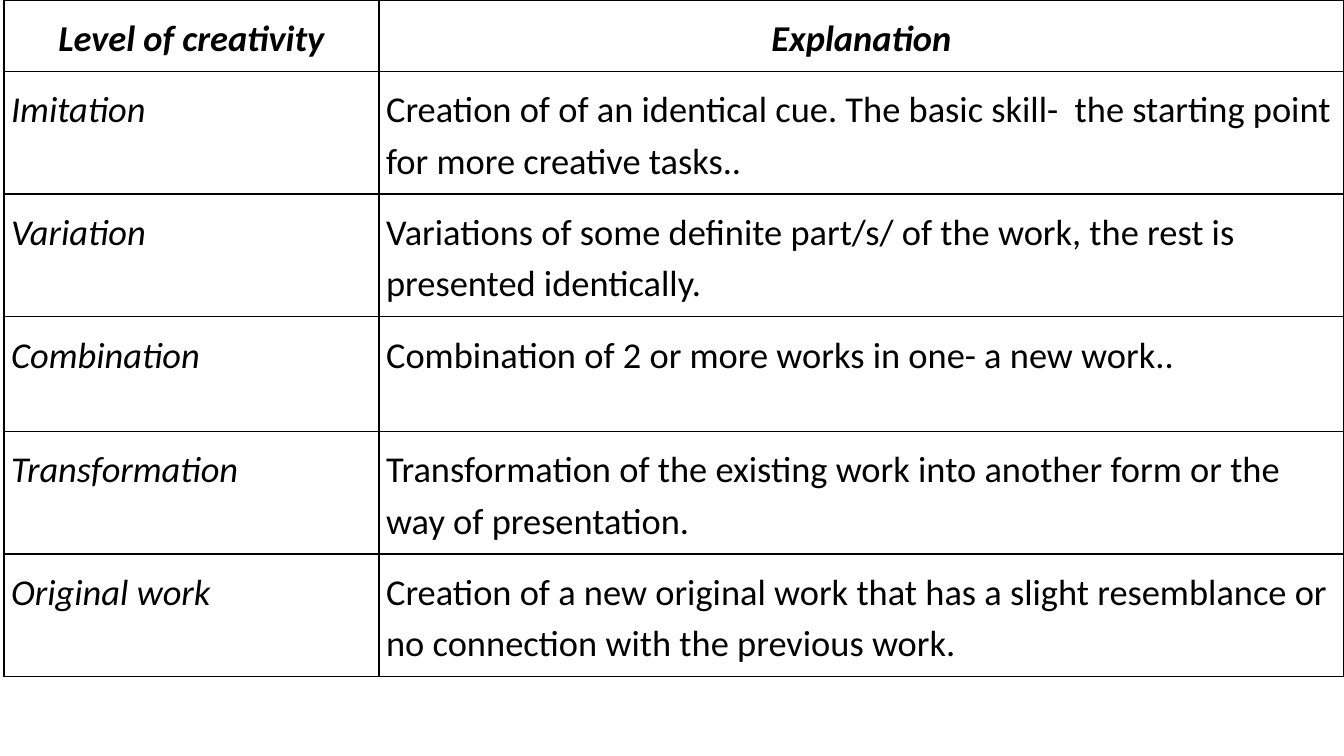
from dataclasses import dataclass

from lxml import etree
from pptx import Presentation
from pptx.dml.color import RGBColor
from pptx.enum.text import PP_ALIGN
from pptx.oxml.ns import qn
from pptx.util import Inches, Pt

LEFT, CENTER = PP_ALIGN.LEFT, PP_ALIGN.CENTER

HEAD = ("Level of creativity", "Explanation")
LEVELS = [
    ("Imitation", "Creation of of an identical cue. The basic skill-  the "
                  "starting point for more creative tasks.."),
    ("Variation", "Variations of some definite part/s/ of the work, "
                  "the rest is presented identically."),
    ("Combination", "Combination of 2 or more works in one- a new work.."),
    ("Transformation", "Transformation of the existing work into another form "
                       "or the way of presentation."),
    ("Original work", "Creation of a new original work that has a slight "
                      "resemblance or no connection with the previous work."),
]
WIDE, HIGH = 13.33, 7.5
EDGE = 0.04
COLS = (3.72, 9.57)
ROWS = (0.67, 1.18, 1.14, 1.14, 1.14, 1.18)


@dataclass(frozen=True)
class Theme:
    font: str = "Calibri"
    size: int = 26
    ink: str = "000000"
    paper: str = "FFFFFF"
    rule: int = 1
    lead: float = 1.15
    side: float = 0.07
    top: float = 0.1


THEME = Theme()


def add_rules(cell):
    """Draw a solid line on all four sides of the cell."""
    props = cell._tc.get_or_add_tcPr()
    for spot, tag in enumerate(("a:lnL", "a:lnR", "a:lnT", "a:lnB")):
        line = etree.Element(qn(tag), w=str(Pt(THEME.rule)))
        fill = etree.SubElement(line, qn("a:solidFill"))
        etree.SubElement(fill, qn("a:srgbClr"), val=THEME.ink)
        props.insert(spot, line)


def fill_cell(cell, text, align, bold, italic):
    cell.fill.solid()
    cell.fill.fore_color.rgb = RGBColor.from_string(THEME.paper)
    cell.margin_left = cell.margin_right = Inches(THEME.side)
    cell.margin_top = cell.margin_bottom = Inches(THEME.top)
    para = cell.text_frame.paragraphs[0]
    para.text = text
    para.alignment = align
    para.line_spacing = THEME.lead
    font = para.runs[0].font
    font.name, font.size = THEME.font, Pt(THEME.size)
    font.bold, font.italic = bold, italic
    font.color.rgb = RGBColor.from_string(THEME.ink)
    add_rules(cell)


def main():
    deck = Presentation()
    deck.slide_width, deck.slide_height = Inches(WIDE), Inches(HIGH)
    slide = deck.slides.add_slide(deck.slide_layouts[6])
    table = slide.shapes.add_table(
        len(ROWS), len(COLS), Inches(EDGE), 0,
        Inches(sum(COLS)), Inches(sum(ROWS))).table
    table.first_row = table.horz_banding = False
    for col, width in zip(table.columns, COLS):
        col.width = Inches(width)
    for row, height in zip(table.rows, ROWS):
        row.height = Inches(height)
    for r, texts in enumerate([HEAD] + LEVELS):
        head = r == 0
        for c, text in enumerate(texts):
            fill_cell(table.cell(r, c), text, CENTER if head else LEFT,
                      bold=head, italic=head or c == 0)
    deck.save("out.pptx")


if __name__ == "__main__":
    main()
